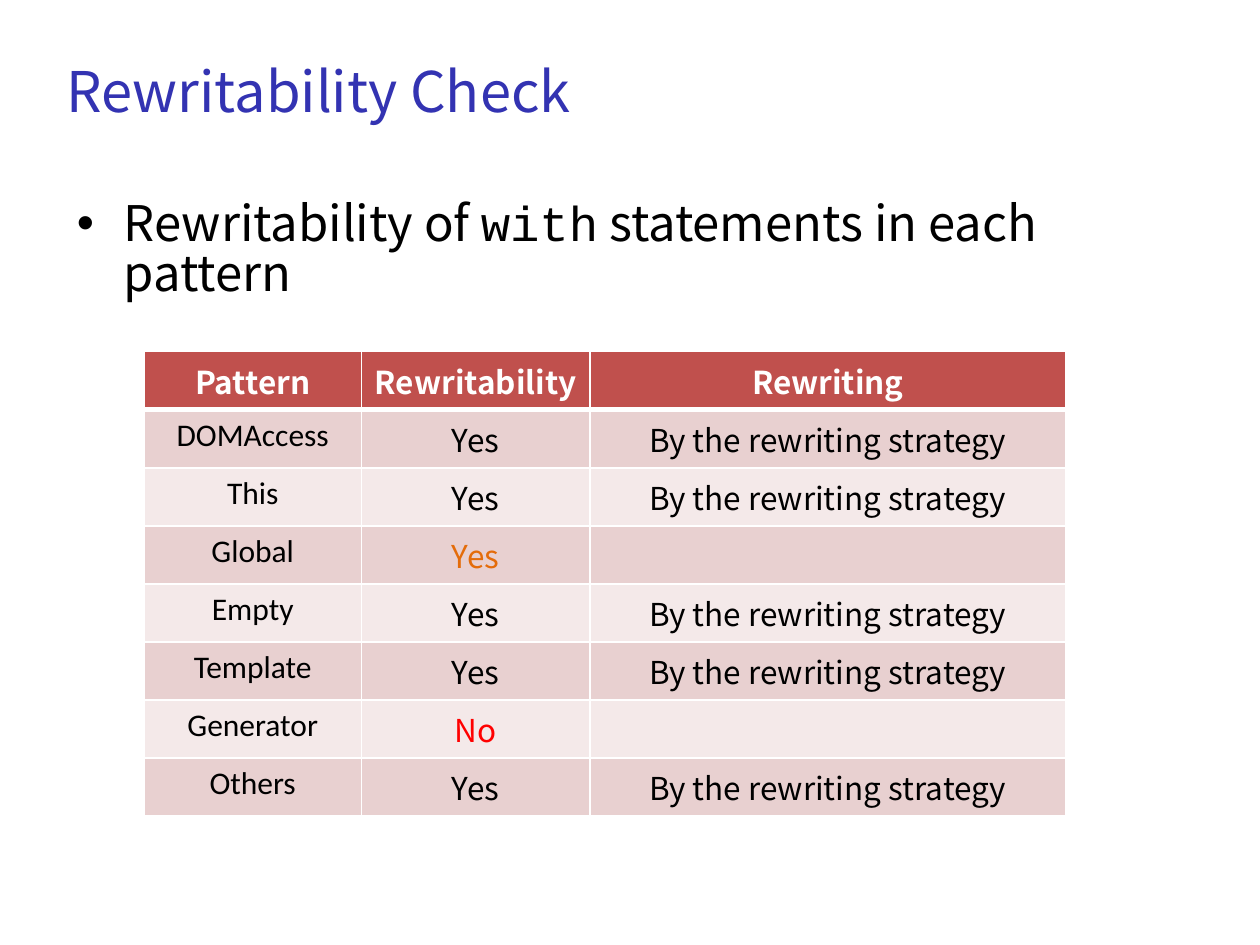
from dataclasses import dataclass

from lxml.etree import SubElement
from pptx import Presentation
from pptx.dml.color import RGBColor
from pptx.enum.text import MSO_ANCHOR as Anchor, PP_ALIGN as Align
from pptx.oxml.ns import qn
from pptx.util import Cm, Pt


@dataclass(frozen=True)
class Theme:
    sans: str = "Noto Sans CJK KR"
    label: str = "Calibri"
    mono: str = "Courier New"
    title_size: int = 32
    body_size: int = 28
    table_size: int = 18
    title: str = "3333B2"
    text: str = "000000"
    white: str = "FFFFFF"
    header: str = "C0504D"
    bands: tuple = ("E8D0D0", "F4E9E9")
    caution: str = "E46C0A"
    negative: str = "FF0000"


THEME = Theme()
STRATEGY = "By the rewriting strategy"
HEADINGS = ("Pattern", "Rewritability", "Rewriting")
PATTERNS = (
    ("DOMAccess", "Yes", STRATEGY),
    ("This", "Yes", STRATEGY),
    ("Global", "Yes", ""),
    ("Empty", "Yes", STRATEGY),
    ("Template", "Yes", STRATEGY),
    ("Generator", "No", ""),
    ("Others", "Yes", STRATEGY),
)
ANSWER_COLORS = {"Global": THEME.caution, "Generator": THEME.negative}


def add_text(para, text, *, size, font=THEME.sans, color=THEME.text, bold=False):
    span = para.add_run()
    span.text = text
    span.font.name = font
    span.font.size = Pt(size)
    span.font.bold = bold
    span.font.color.rgb = RGBColor.from_string(color)


def add_box(page, left, top, width, height, anchor=Anchor.TOP):
    """Add a wrapping text box and return its first paragraph."""
    frame = page.shapes.add_textbox(Cm(left), Cm(top), Cm(width), Cm(height)).text_frame
    frame.word_wrap = True
    frame.vertical_anchor = anchor
    return frame.paragraphs[0]


def set_bullet(para, indent):
    props = para._p.get_or_add_pPr()
    props.set("marL", str(Cm(indent)))
    props.set("indent", str(-Cm(indent)))
    SubElement(props, qn("a:buFont"), typeface="Arial")
    SubElement(props, qn("a:buChar"), char="•")


def set_borders(cell, bottom):
    """Draw white cell borders; bottom is the lower line's width in points."""
    props = cell._tc.get_or_add_tcPr()
    for position, (side, width) in enumerate(
        (("lnL", 1), ("lnR", 1), ("lnT", 1), ("lnB", bottom))
    ):
        line = SubElement(props, qn(f"a:{side}"), w=str(Pt(width)))
        fill = SubElement(line, qn("a:solidFill"))
        SubElement(fill, qn("a:srgbClr"), val=THEME.white)
        props.insert(position, line)


def fill_cell(cell, text, background, bottom=1, **text_format):
    cell.fill.solid()
    cell.fill.fore_color.rgb = RGBColor.from_string(background)
    set_borders(cell, bottom)
    para = cell.text_frame.paragraphs[0]
    para.alignment = Align.CENTER
    para.font.size = Pt(THEME.table_size)
    if text:
        add_text(para, text, size=THEME.table_size, **text_format)


def add_pattern_table(page):
    widths = (4.39, 4.6, 9.6)
    row_height = 1.17
    row_count = len(PATTERNS) + 1
    table = page.shapes.add_table(
        row_count, len(widths), Cm(2.9), Cm(7.09), Cm(sum(widths)), Cm(row_height * row_count)
    ).table
    for column, width in zip(table.columns, widths):
        column.width = Cm(width)
    for row in table.rows:
        row.height = Cm(row_height)

    for column, heading in enumerate(HEADINGS):
        fill_cell(table.cell(0, column), heading, THEME.header, bottom=3,
                  color=THEME.white, bold=True)
    for index, (pattern, answer, rewriting) in enumerate(PATTERNS):
        band = THEME.bands[index % 2]
        name_cell, answer_cell, rewriting_cell = table.rows[index + 1].cells
        fill_cell(name_cell, pattern, band, font=THEME.label)
        fill_cell(answer_cell, answer, band, color=ANSWER_COLORS.get(pattern, THEME.text))
        fill_cell(rewriting_cell, rewriting, band)


def main():
    deck = Presentation()
    deck.slide_width, deck.slide_height = Cm(25.4), Cm(19.05)
    page = deck.slides.add_slide(deck.slide_layouts[6])

    title = add_box(page, 1.09, 0.53, 22.86, 2.57, Anchor.MIDDLE)
    add_text(title, "Rewritability Check", size=THEME.title_size, color=THEME.title)

    body = add_box(page, 1.3, 3.94, 22.63, 5.59)
    body.line_spacing = 0.85
    set_bullet(body, 0.95)
    for text, font in (
        ("Rewritability of ", THEME.sans),
        ("with", THEME.mono),
        (" statements in each pattern", THEME.sans),
    ):
        add_text(body, text, size=THEME.body_size, font=font)

    add_pattern_table(page)
    deck.save("out.pptx")


if __name__ == "__main__":
    main()
